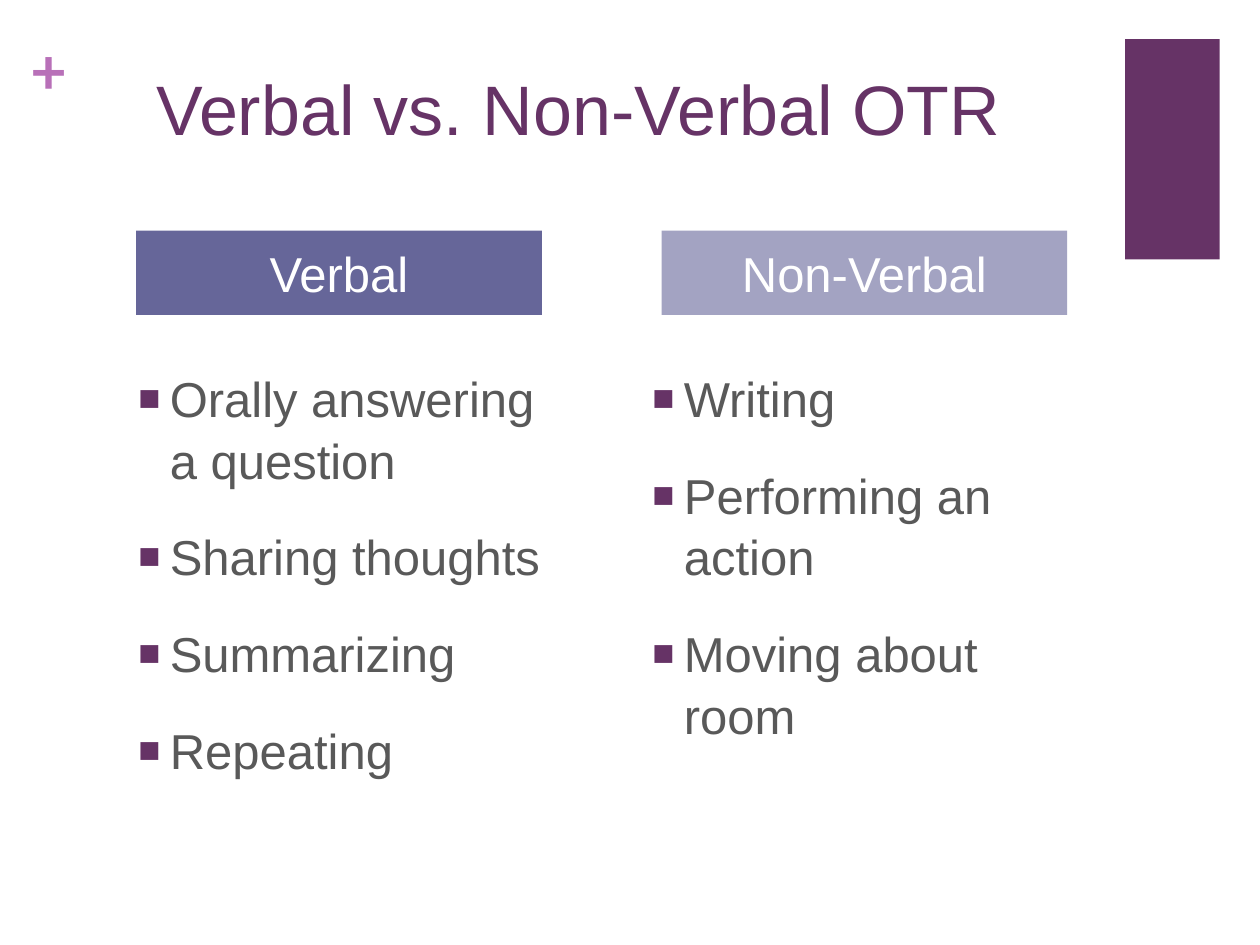
from lxml.etree import SubElement
from pptx import Presentation
from pptx.dml.color import RGBColor
from pptx.enum.shapes import MSO_SHAPE as Shape
from pptx.enum.text import MSO_ANCHOR as Anchor, PP_ALIGN as Align
from pptx.oxml.ns import qn
from pptx.util import Inches, Pt

PLUM = RGBColor(0x66, 0x33, 0x66)
ORCHID = RGBColor(0xB8, 0x70, 0xB8)
INDIGO = RGBColor(0x66, 0x66, 0x99)
LAVENDER = RGBColor(0xA3, 0xA3, 0xC2)
GRAY = RGBColor(0x59, 0x59, 0x59)
WHITE = RGBColor(0xFF, 0xFF, 0xFF)


def write(paragraph, text, color, **font_format):
    run = paragraph.add_run()
    run.text = text
    run.font.color.rgb = color
    for name, value in ({"name": "Arial", "size": Pt(28)} | font_format).items():
        setattr(run.font, name, value)


def add_block(left, top, width, height, color):
    block = slide.shapes.add_shape(
        Shape.RECTANGLE, Inches(left), Inches(top), Inches(width), Inches(height))
    block.shadow.inherit = False
    block.fill.solid()
    block.fill.fore_color.rgb = color
    block.line.fill.background()
    return block


presentation = Presentation()
presentation.slide_width = Inches(10)
presentation.slide_height = Inches(7.5)
slide = presentation.slides.add_slide(presentation.slide_layouts[5])

add_block(8.93, 0.31, 0.75, 1.75, PLUM)

plus = slide.shapes.add_textbox(Inches(0.24), Inches(0.25), Inches(0.29), Inches(0.61))
for side in ("left", "top", "right", "bottom"):
    setattr(plus.text_frame, f"margin_{side}", 0)
write(plus.text_frame.paragraphs[0], "+", ORCHID, name="Lato", size=Pt(36), bold=True)

title = slide.shapes.title
title_box = {"left": 1.14, "top": 0.42, "width": 7.68, "height": 0.92}
for name, value in title_box.items():
    setattr(title, name, Inches(value))
title.text_frame.vertical_anchor = Anchor.TOP
title.text_frame.margin_top = Inches(0.1)
title.text_frame.paragraphs[0].alignment = Align.LEFT
write(title.text_frame.paragraphs[0], "Verbal vs. Non-Verbal OTR", PLUM, size=Pt(40))

columns = [
    ("Verbal", INDIGO, 1.08, 1,
     ["Orally answering a question", "Sharing thoughts", "Summarizing", "Repeating"]),
    ("Non-Verbal", LAVENDER, 5.25, 5.08,
     ["Writing", "Performing an action", "Moving about room"]),
]
for heading, color, heading_left, list_left, items in columns:
    header = add_block(heading_left, 1.83, 3.22, 0.67, color)
    header.text_frame.margin_top = header.text_frame.margin_bottom = 0
    header.text_frame.vertical_anchor = Anchor.MIDDLE
    header.text_frame.paragraphs[0].alignment = Align.CENTER
    write(header.text_frame.paragraphs[0], heading, WHITE)

    body = slide.shapes.add_textbox(
        Inches(list_left), Inches(2.83), Inches(3.53), Inches(3.43))
    frame = body.text_frame
    frame.word_wrap = True
    frame.margin_top = Inches(0.07)
    for index, item in enumerate(items):
        paragraph = frame.add_paragraph() if index else frame.paragraphs[0]
        paragraph.line_spacing = 1.05
        paragraph.space_before = Pt(20 if index else 0)
        properties = paragraph._p.get_or_add_pPr()
        properties.set("marL", str(Inches(0.25)))
        properties.set("indent", str(-Inches(0.25)))
        bullet_color = SubElement(properties, qn("a:buClr"))
        SubElement(bullet_color, qn("a:srgbClr"), val=str(PLUM))
        SubElement(properties, qn("a:buSzPct"), val="75000")
        SubElement(properties, qn("a:buFont"), typeface="Arial")
        SubElement(properties, qn("a:buChar"), char="■")
        write(paragraph, item, GRAY)

presentation.save("out.pptx")
